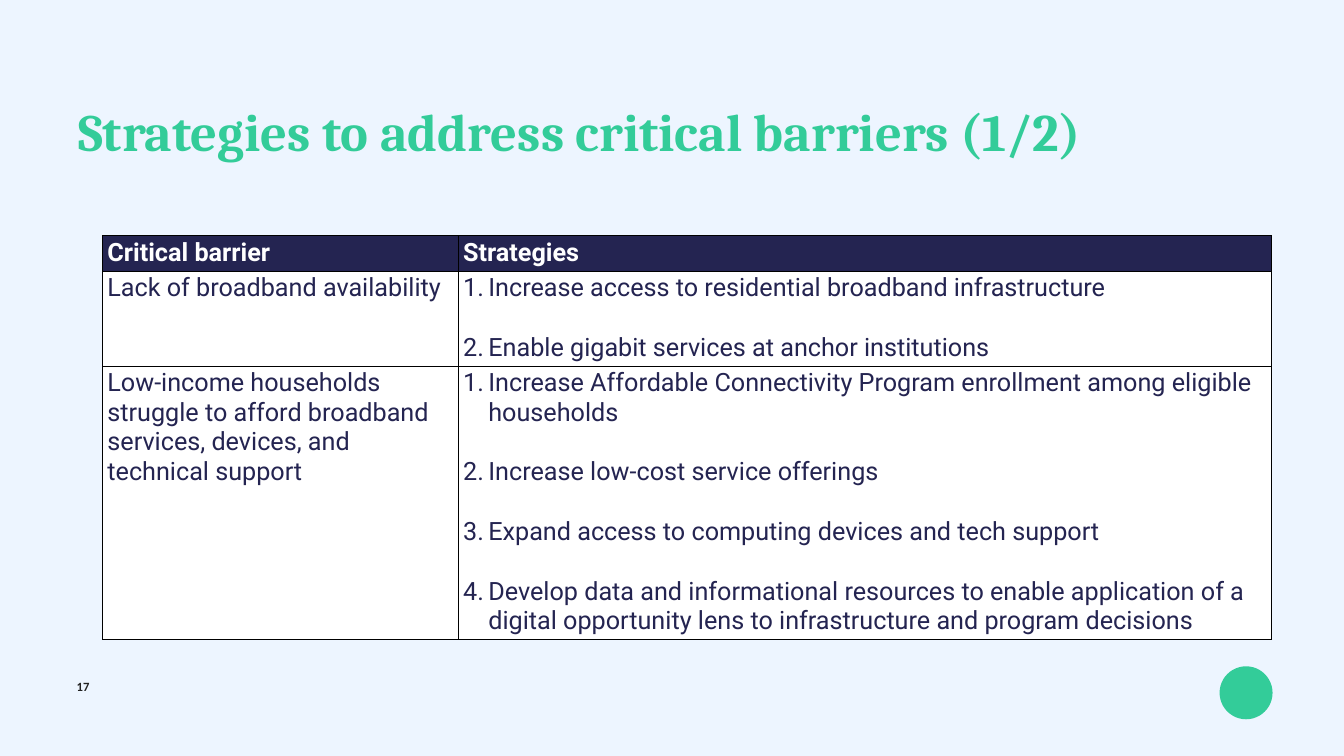
from lxml import etree
from pptx import Presentation
from pptx.dml.color import RGBColor
from pptx.enum.shapes import MSO_SHAPE
from pptx.enum.text import MSO_ANCHOR, PP_ALIGN
from pptx.oxml.ns import qn
from pptx.util import Cm, Pt

OVAL = MSO_SHAPE.OVAL
TOP = MSO_ANCHOR.TOP
LEFT = PP_ALIGN.LEFT

TITLE = "Strategies to address critical barriers (1/2)"
PAGE_NUMBER = "17"
HEADERS = ("Critical barrier", "Strategies")
BARRIERS = [
    ("Lack of broadband availability", [
        "Increase access to residential broadband infrastructure",
        "Enable gigabit services at anchor institutions",
    ]),
    ("Low-income households struggle to afford broadband services, devices, and technical support", [
        "Increase Affordable Connectivity Program enrollment among eligible households",
        "Increase low-cost service offerings",
        "Expand access to computing devices and tech support",
        "Develop data and informational resources to enable application of a "
        "digital opportunity lens to infrastructure and program decisions",
    ]),
]

THEME = {
    "background": "EDF5FF", "accent": "33CC99", "navy": "242451",
    "white": "FFFFFF", "border": "000000", "number": "212121",
    "title_font": "Cambria", "table_font": "Roboto", "number_font": "Calibri",
    "title_size": 75, "table_size": 36, "number_size": 18, "item_gap": 43,
}
COLUMN_WIDTHS = (17.93, 40.97)
ROW_HEIGHTS = (1.8, 4.78, 13.8)
NUMBER_INDENT = Cm(1.27)


def color(name):
    return RGBColor.from_string(THEME[name])


def style(paragraph, role, color_name, bold=False):
    font = paragraph.font
    font.name = THEME[role + "_font"]
    font.size = Pt(THEME[role + "_size"])
    font.bold = bold
    font.color.rgb = color(color_name)


def fill_placeholder(shape, text, box, role, color_name):
    shape.left, shape.top, shape.width, shape.height = map(Cm, box)
    frame = shape.text_frame
    frame.text = text
    frame.word_wrap = True
    frame.vertical_anchor = TOP
    paragraph = frame.paragraphs[0]
    properties = paragraph._p.get_or_add_pPr()
    properties.set("marL", "0")
    properties.set("indent", "0")
    etree.SubElement(properties, qn("a:buNone"))
    paragraph.alignment = LEFT
    paragraph.line_spacing = 0.9
    paragraph.space_before = Pt(0)
    style(paragraph, role, color_name, bold=True)


def add_borders(cell):
    properties = cell._tc.get_or_add_tcPr()
    for position, side in enumerate(("lnL", "lnR", "lnT", "lnB")):
        line = etree.Element(qn("a:" + side), w=str(Pt(1)))
        solid = etree.SubElement(line, qn("a:solidFill"))
        etree.SubElement(solid, qn("a:srgbClr"), val=THEME["border"])
        properties.insert(position, line)


def fill_cell(cell, lines, fill, text_color, bold=False, numbered=False):
    cell.fill.solid()
    cell.fill.fore_color.rgb = color(fill)
    add_borders(cell)
    frame = cell.text_frame
    for index, line in enumerate(lines):
        paragraph = frame.add_paragraph() if index else frame.paragraphs[0]
        paragraph.text = line
        if numbered:
            properties = paragraph._p.get_or_add_pPr()
            properties.set("marL", str(NUMBER_INDENT))
            properties.set("indent", str(-NUMBER_INDENT))
            etree.SubElement(properties, qn("a:buAutoNum"), type="arabicPeriod")
        if index:
            paragraph.space_before = Pt(THEME["item_gap"])
        style(paragraph, "table", text_color, bold)


def add_barrier_table(slide):
    table = slide.shapes.add_table(
        len(BARRIERS) + 1, len(HEADERS), Cm(5.16), Cm(11.86),
        Cm(sum(COLUMN_WIDTHS)), Cm(sum(ROW_HEIGHTS))).table
    for column, width in zip(table.columns, COLUMN_WIDTHS):
        column.width = Cm(width)
    for row, height in zip(table.rows, ROW_HEIGHTS):
        row.height = Cm(height)
    for index, header in enumerate(HEADERS):
        fill_cell(table.cell(0, index), [header], "navy", "white", bold=True)
    for index, (barrier, strategies) in enumerate(BARRIERS, start=1):
        fill_cell(table.cell(index, 0), [barrier], "white", "navy")
        fill_cell(table.cell(index, 1), strategies, "white", "navy", numbered=True)


def main():
    presentation = Presentation()
    presentation.slide_width, presentation.slide_height = Cm(67.74), Cm(38.1)
    slide = presentation.slides.add_slide(presentation.slide_layouts[1])
    slide.background.fill.solid()
    slide.background.fill.fore_color.rgb = color("background")

    circle = slide.shapes.add_shape(OVAL, Cm(61.47), Cm(33.58), Cm(2.67), Cm(2.67))
    circle.shadow.inherit = False
    circle.fill.solid()
    circle.fill.fore_color.rgb = color("accent")
    circle.line.fill.background()

    fill_placeholder(slide.shapes.title, TITLE, (3.68, 5.21, 60.35, 3.15), "title", "accent")
    fill_placeholder(slide.placeholders[1], PAGE_NUMBER, (3.61, 34.19, 48.72, 0.94), "number", "number")
    add_barrier_table(slide)
    presentation.save("out.pptx")


if __name__ == "__main__":
    main()
